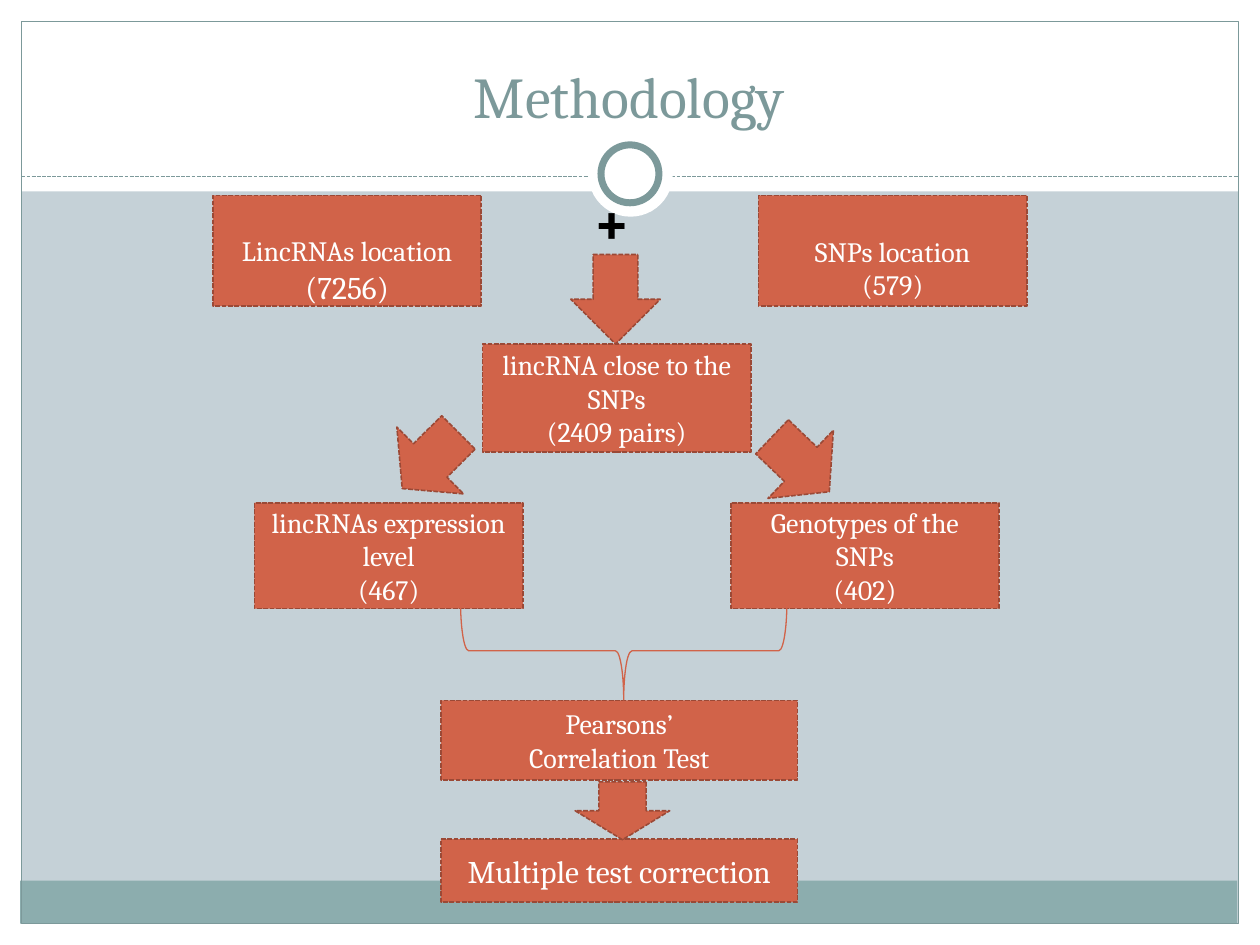
from lxml import etree
from pptx import Presentation
from pptx.dml.color import RGBColor
from pptx.enum.dml import MSO_LINE
from pptx.enum.shapes import MSO_CONNECTOR, MSO_SHAPE
from pptx.enum.text import MSO_ANCHOR, PP_ALIGN
from pptx.oxml.ns import qn
from pptx.util import Inches, Pt

WHITE = RGBColor(0xFF, 0xFF, 0xFF)
BLACK = RGBColor(0, 0, 0)
SKY = RGBColor(0xC5, 0xD1, 0xD7)
TEAL = RGBColor(0x8C, 0xAD, 0xAE)
SLATE = RGBColor(0x7C, 0x99, 0x9A)
RUST = RGBColor(0xD1, 0x63, 0x49)
BROWN = RGBColor(0x9B, 0x49, 0x36)
RECT, OVAL = MSO_SHAPE.RECTANGLE, MSO_SHAPE.OVAL
ARROW, BRACE = MSO_SHAPE.RIGHT_ARROW, MSO_SHAPE.LEFT_BRACE
DASH = MSO_LINE.SQUARE_DOT
CENTER, LEFT = PP_ALIGN.CENTER, PP_ALIGN.LEFT
MIDDLE, TOP, BOTTOM = MSO_ANCHOR.MIDDLE, MSO_ANCHOR.TOP, MSO_ANCHOR.BOTTOM

prs = Presentation()
prs.slide_width, prs.slide_height = Inches(10), Inches(7.5)
s = prs.slides.add_slide(prs.slide_layouts[6])
s.background.fill.solid()
s.background.fill.fore_color.rgb = SKY


def add_shape(kind, box, fill=None, line=None, width=0.75, dash=None, rotation=0):
    sp = s.shapes.add_shape(kind, *[Inches(v) for v in box])
    sp.shadow.inherit = False
    sp.rotation = rotation
    if fill is None:
        sp.fill.background()
    else:
        sp.fill.solid()
        sp.fill.fore_color.rgb = fill
    if line is None:
        sp.line.fill.background()
    else:
        sp.line.color.rgb = line
        sp.line.width = Pt(width)
        if dash:
            sp.line.dash_style = dash
    return sp


def add_text(sp, lines, sizes, color=WHITE, bold=False, align=CENTER,
             anchor=MIDDLE, wrap=True, top=0.0, bottom=0.0):
    tf = sp.text_frame
    tf.word_wrap = wrap
    tf.vertical_anchor = anchor
    tf.margin_top, tf.margin_bottom = Inches(top), Inches(bottom)
    for i, (line, size) in enumerate(zip(lines, sizes)):
        p = tf.paragraphs[0] if i == 0 else tf.add_paragraph()
        p.alignment = align
        r = p.add_run()
        r.text = line
        r.font.name = "Cambria"
        r.font.size = Pt(size)
        r.font.bold = bold
        r.font.color.rgb = color


for box in [(0, 7.33, 10, 0.17), (0, 0, 10, 1.52), (0, 0, 0.17, 7.5), (9.83, 0, 0.17, 7.5)]:
    add_shape(RECT, box, WHITE)
add_shape(RECT, (0.16, 6.99, 9.66, 0.34), TEAL)
add_shape(RECT, (0.17, 0.17, 9.66, 7.16), line=SLATE)

rule = s.shapes.add_connector(MSO_CONNECTOR.STRAIGHT, Inches(0.17), Inches(1.4), Inches(9.83), Inches(1.4))
rule.line.color.rgb = SLATE
rule.line.width = Pt(0.75)
rule.line.dash_style = DASH
etree.SubElement(rule._element.spPr, qn("a:effectLst"))

add_shape(OVAL, (4.67, 1.05, 0.67, 0.67), WHITE)
add_shape(OVAL, (4.77, 1.15, 0.46, 0.46), WHITE, SLATE, 4)

title = s.shapes.add_textbox(Inches(0.33), Inches(0.25), Inches(9.33), Inches(0.83))
add_text(title, ["Methodology"], [33], SLATE, anchor=BOTTOM, top=0.05, bottom=0.05)

steps = [
    ((1.69, 1.55, 2.13, 0.88), ["LincRNAs location", "(7256)"], [16, 18], 0.3),
    ((6.02, 1.55, 2.13, 0.88), ["SNPs location", "(579)"], [16, 16], 0.27),
    ((3.83, 2.73, 2.13, 0.86), ["lincRNA close to the SNPs", "(2409 pairs)"], [16, 16], 0),
    ((2.02, 3.99, 2.13, 0.84), ["lincRNAs expression level", "(467)"], [16, 16], 0),
    ((5.8, 3.99, 2.13, 0.84), ["Genotypes of the SNPs", "(402)"], [16, 16], 0),
    ((3.5, 5.56, 2.83, 0.63), ["Pearsons’", "Correlation Test"], [16, 16], 0),
    ((3.5, 6.66, 2.83, 0.5), ["Multiple test correction"], [18], 0),
]
for box, lines, sizes, top in steps:
    sp = add_shape(RECT, box, RUST, BROWN, 0.9, DASH)
    add_text(sp, lines, sizes, top=top)

arrows = [
    ((4.53, 2.02, 0.71, 0.71), 90),
    ((3.1, 3.28, 0.63, 0.75), 135),
    ((6.04, 3.31, 0.63, 0.75), 43.8),
    ((4.71, 6.06, 0.46, 0.75), 90),
]
for box, rotation in arrows:
    add_shape(ARROW, box, RUST, BROWN, 0.9, DASH, rotation)

add_shape(BRACE, (4.56, 3.87, 0.78, 2.59), line=RUST, rotation=270)

plus = s.shapes.add_textbox(Inches(4.61), Inches(1.39), Inches(0.56), Inches(0.71))
add_text(plus, ["+"], [36], BLACK, bold=True, align=LEFT, anchor=TOP, wrap=False, top=0.05, bottom=0.05)

prs.save("out.pptx")
